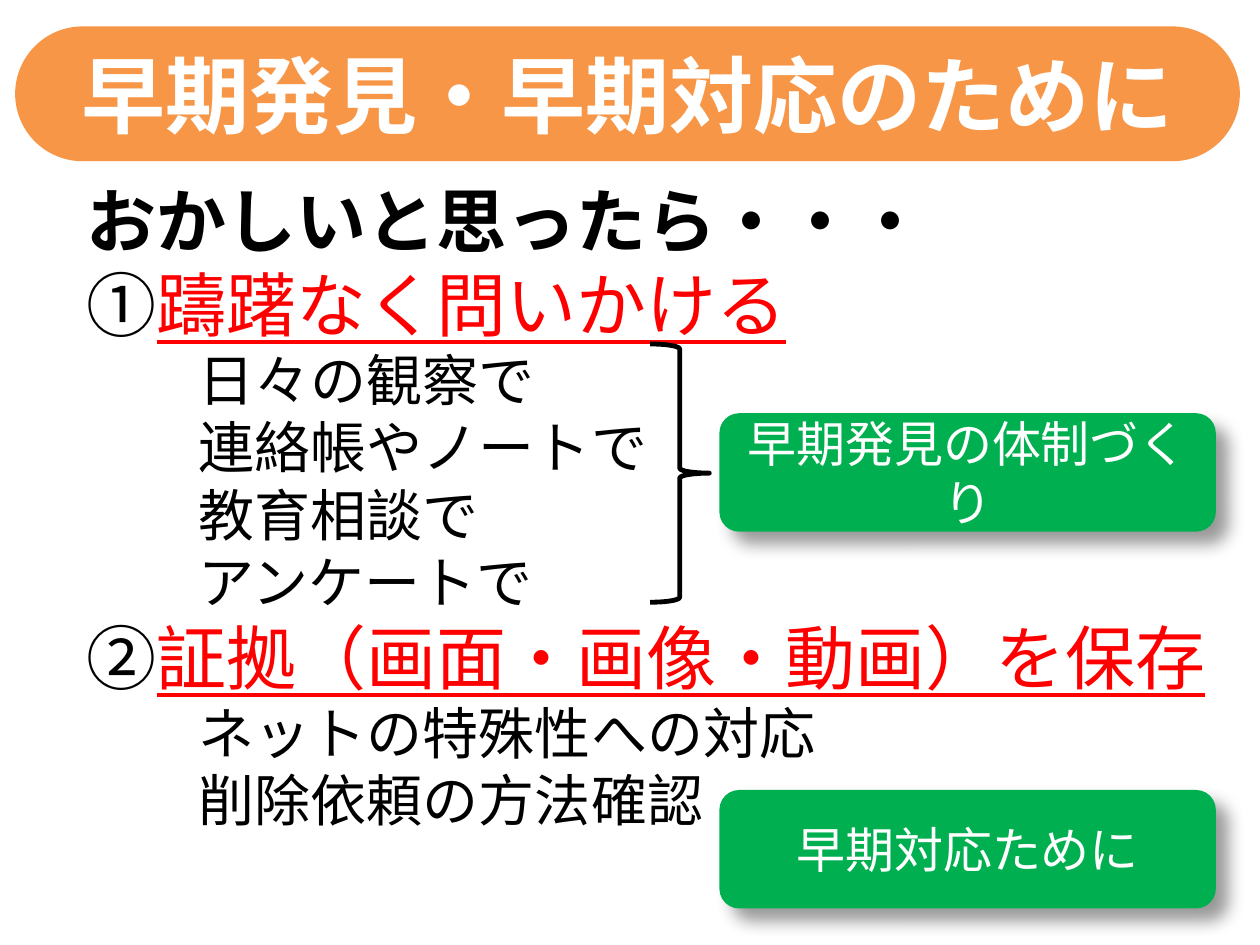
from lxml.etree import SubElement
from pptx import Presentation
from pptx.dml.color import RGBColor
from pptx.enum.shapes import MSO_SHAPE
from pptx.enum.text import MSO_ANCHOR, PP_ALIGN
from pptx.oxml.ns import qn
from pptx.util import Inches, Pt

BLACK = RGBColor(0, 0, 0)
WHITE = RGBColor(255, 255, 255)
RED = RGBColor(255, 0, 0)
ORANGE = RGBColor(0xF7, 0x96, 0x46)
GREEN = RGBColor(0, 0xB0, 0x50)
SANS = "Noto Sans CJK JP"
LATIN = "Calibri"

TITLE = "早期発見・早期対応のために"
LEAD = "おかしいと思ったら・・・"
STEPS = [
    ("①", "躊躇なく問いかける",
     ["日々の観察で", "連絡帳やノートで", "教育相談で", "アンケートで"]),
    ("②", "証拠（画面・画像・動画）を保存",
     ["ネットの特殊性への対応", "削除依頼の方法確認"]),
]
LABELS = [(3.28, "早期発見の体制づくり"), (6.27, "早期対応ために")]


def style(run, size, color, face, bold=False, line=False):
    font = run.font
    font.size, font.name, font.bold = Pt(size), face, bold
    font.color.rgb = color
    font.underline = line
    if face == SANS:
        SubElement(run._r.get_or_add_rPr(), qn("a:ea"), typeface=face)


def add_line(frame, parts, size, indent=0):
    first = frame.paragraphs[0]
    para = first if not first.runs else frame.add_paragraph()
    para.line_spacing = Pt(size * 1.2)
    if indent:
        props = para._p.get_or_add_pPr()
        props.set("marL", str(Inches(indent)))
        props.set("indent", "0")
    for text, color, bold, line in parts:
        run = para.add_run()
        run.text = text
        style(run, size, color, SANS, bold, line)


def add_box(slide, place, text, size, fill, bold=False):
    box = slide.shapes.add_shape(
        MSO_SHAPE.ROUNDED_RECTANGLE, *map(Inches, place))
    box.shadow.inherit = False
    box.fill.solid()
    box.fill.fore_color.rgb = fill
    box.line.fill.background()
    frame = box.text_frame
    frame.word_wrap = True
    frame.vertical_anchor = MSO_ANCHOR.MIDDLE
    frame.text = text
    para = frame.paragraphs[0]
    para.alignment = PP_ALIGN.CENTER
    style(para.runs[0], size, WHITE, LATIN, bold)
    return box


def add_shade(box):
    effects = box._element.spPr.find(qn("a:effectLst"))
    shade = SubElement(effects, qn("a:outerShdw"), blurRad=str(Pt(10)),
                       dist=str(Pt(10)), dir="2700000", algn="tl",
                       rotWithShape="0")
    color = SubElement(shade, qn("a:srgbClr"), val=str(BLACK))
    SubElement(color, qn("a:alpha"), val="40000")


def main():
    deck = Presentation()
    deck.slide_width, deck.slide_height = Inches(10), Inches(7.5)
    slide = deck.slides.add_slide(deck.slide_layouts[6])

    body = slide.shapes.add_textbox(
        *map(Inches, (0.59, 1.31, 9.13, 6.02))).text_frame
    body.word_wrap = True
    body.margin_top = Inches(0.1)
    add_line(body, [(LEAD, BLACK, True, False)], 40)
    for mark, head, items in STEPS:
        add_line(body, [(mark, BLACK, False, False),
                        (head, RED, False, True)], 40)
        for item in items:
            add_line(body, [(item, BLACK, False, False)], 32, 0.89)

    title = add_box(slide, (0.12, 0.21, 9.72, 1.07), TITLE, 48, ORANGE, True)
    title.adjustments[0] = 0.5

    brace = slide.shapes.add_shape(
        MSO_SHAPE.RIGHT_BRACE, *map(Inches, (5.16, 2.73, 0.47, 2.05)))
    brace.shadow.inherit = False
    brace.fill.background()
    brace.line.color.rgb = BLACK
    brace.line.width = Pt(2.75)

    for top, text in LABELS:
        add_shade(add_box(slide, (5.71, top, 3.94, 0.94), text, 28, GREEN))

    deck.save("out.pptx")


if __name__ == "__main__":
    main()
